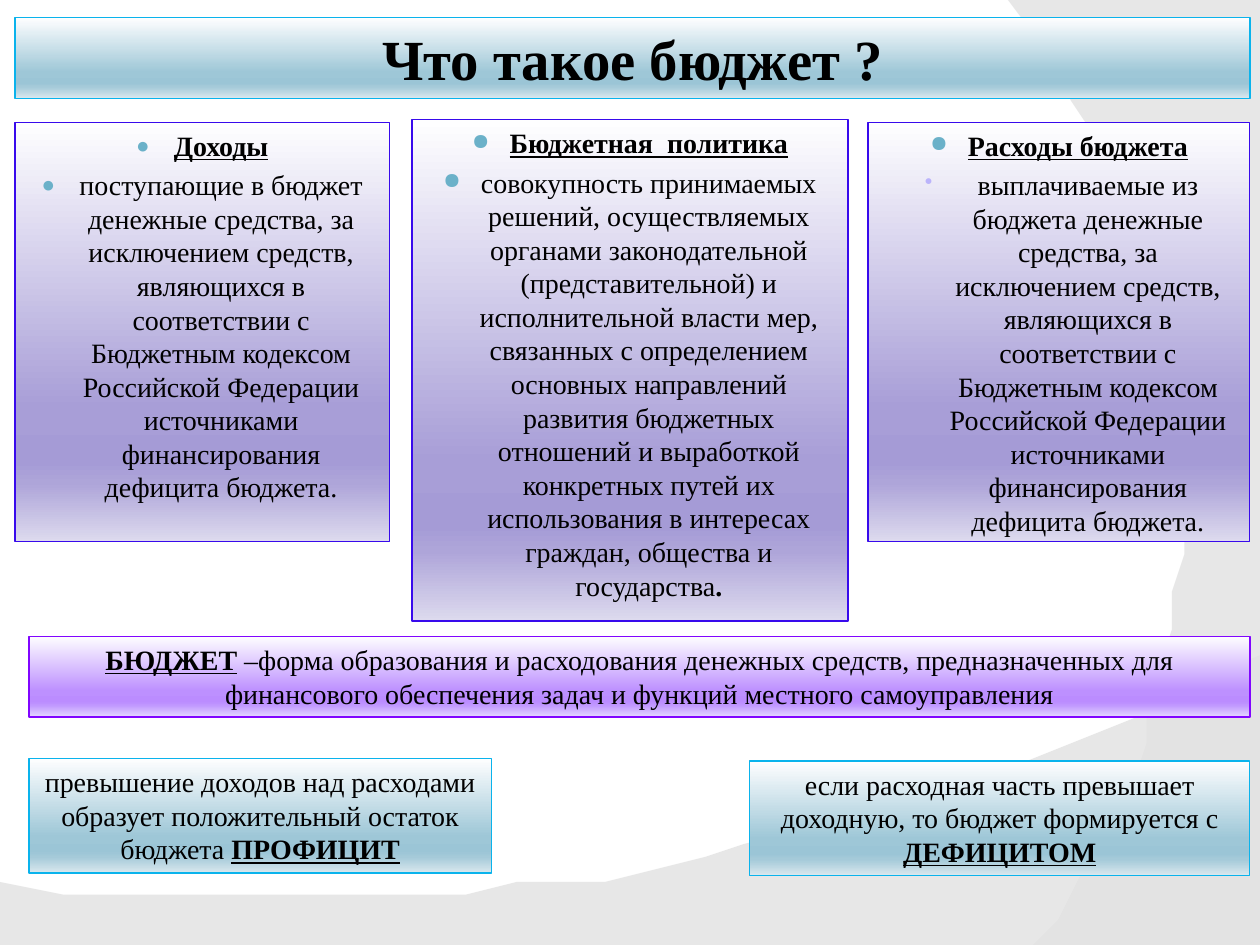
import pptx
import pptx.dml.color
import pptx.enum.shapes
import pptx.enum.text
import pptx.oxml
import pptx.oxml.ns
import pptx.util

RGB = pptx.dml.color.RGBColor
BLACK = RGB(0x00, 0x00, 0x00)
WAVE_GREY = RGB(0xE2, 0xE2, 0xE2)
BULLET_BLUE = RGB(0x6B, 0xB1, 0xC9)
BULLET_LILAC = RGB(0xBB, 0xB4, 0xFB)
PALE = RGB(0xFE, 0xFE, 0xFF)

# Each style: line colour, then the gradient colours after the pale start.
LILAC = (RGB(0x38, 0x0A, 0xEC), RGB(0xA8, 0x9E, 0xD7), RGB(0xA5, 0x9B, 0xD6),
         RGB(0xAE, 0xA5, 0xD9), RGB(0xDD, 0xDA, 0xEE))
VIOLET = (RGB(0x81, 0x05, 0xFF), RGB(0xBD, 0x90, 0xFF), RGB(0xBB, 0x8C, 0xFF),
          RGB(0xC1, 0x99, 0xFF), RGB(0xE4, 0xD6, 0xFF))
BLUE = (RGB(0x0A, 0xB3, 0xEC), RGB(0x9E, 0xC7, 0xD7), RGB(0x9B, 0xC5, 0xD6),
        RGB(0xA5, 0xCA, 0xD9), RGB(0xDA, 0xE8, 0xEE))
STOPS = (0, 68, 81, 86, 100)

COLUMNS, ROWS = 100, 75
CELL = pptx.util.Inches(0.1)
FONT = "Times New Roman"
BODY_SIZE = 16
PLAIN = {}
BOLD = {"bold": True}
TERM = {"bold": True, "underline": True}

FINANCING = ("в бюджет", "из бюджета")
SOURCES = ("денежные средства, за исключением средств, являющихся в соответствии "
           "с Бюджетным кодексом Российской Федерации источниками "
           "финансирования дефицита бюджета.")
POLICY = ("совокупность принимаемых решений, осуществляемых органами "
          "законодательной (представительной) и исполнительной власти мер, "
          "связанных с определением основных направлений развития бюджетных "
          "отношений и выработкой конкретных путей их использования в интересах "
          "граждан, общества и государства")


def xml(text):
    return pptx.oxml.parse_xml(text.replace(
        ">", f" {pptx.oxml.ns.nsdecls('a')}>", 1))


def place(sp, cells):
    """Set left, top, width and height in grid cells."""
    for name, value in zip(("left", "top", "width", "height"), cells):
        setattr(sp, name, int(value * CELL))


def paint(sp, style):
    """Give a box its vertical gradient and thin line."""
    line, *shades = style
    sp.fill.gradient()
    stops = "".join(
        f'<a:gs pos="{pos * 1000}"><a:srgbClr val="{shade}"/></a:gs>'
        for pos, shade in zip(STOPS, (PALE, *shades)))
    old = sp._element.spPr.find(pptx.oxml.ns.qn("a:gradFill"))
    old.getparent().replace(old, xml(
        f'<a:gradFill><a:gsLst>{stops}</a:gsLst>'
        '<a:lin ang="5400000" scaled="0"/></a:gradFill>'))
    sp.line.color.rgb = line
    sp.line.width = pptx.util.Pt(0.75)


def add_bullet(p, char, color, margin, indent):
    pPr = p._p.get_or_add_pPr()
    for name, inches in (("marL", margin), ("indent", indent)):
        pPr.set(name, str(pptx.util.Inches(inches)))
    for part in (f'<a:buClr><a:srgbClr val="{color}"/></a:buClr>',
                 '<a:buSzPct val="80000"></a:buSzPct>',
                 f'<a:buChar char="{char}"></a:buChar>'):
        pPr.append(xml(part))


def write(sp, paragraphs, size=BODY_SIZE, bullets=None, anchor="TOP"):
    """Fill a box; a paragraph is a list of (text, format) runs."""
    tf = sp.text_frame
    tf.word_wrap = True
    tf.auto_size = pptx.enum.text.MSO_AUTO_SIZE.NONE
    tf.vertical_anchor = pptx.enum.text.MSO_ANCHOR[anchor]
    for i, runs in enumerate(paragraphs):
        p = tf.add_paragraph() if i else tf.paragraphs[0]
        p.alignment = pptx.enum.text.PP_ALIGN.CENTER
        p.space_before = pptx.util.Pt(0.2 * size if i else 0)
        if bullets:
            add_bullet(p, *bullets[i])
        for text, extra in runs:
            r = p.add_run()
            r.text = text
            r.font.color.rgb = BLACK
            look = {"name": FONT, "size": pptx.util.Pt(size),
                    "bold": False, "underline": False, **extra}
            for name, value in look.items():
                setattr(r.font, name, value)


def add_box(s, cells, style, paragraphs, **options):
    sp = s.shapes.add_shape(pptx.enum.shapes.MSO_SHAPE.RECTANGLE, 0, 0, 0, 0)
    sp.shadow.inherit = False
    place(sp, cells)
    paint(sp, style)
    write(sp, paragraphs, **options)


def curve(points, steps=24):
    """Points along a cubic Bezier curve."""
    return [tuple(sum(k * (1 - t) ** (3 - n) * t ** n * pt[axis]
                      for n, (k, pt) in enumerate(zip((1, 3, 3, 1), points)))
                  for axis in (0, 1))
            for t in (i / steps for i in range(steps + 1))]


def add_wave(s, points):
    """Draw a translucent background outline behind everything else."""
    builder = s.shapes.build_freeform(*points[0], scale=CELL)
    builder.add_line_segments(points[1:], close=True)
    sp = builder.convert_to_shape()
    sp.shadow.inherit = False
    sp.line.fill.background()
    sp.fill.solid()
    sp.fill.fore_color.rgb = WAVE_GREY
    color = sp._element.spPr.find(".//" + pptx.oxml.ns.qn("a:srgbClr"))
    color.append(xml('<a:alpha val="80000"></a:alpha>'))
    s.shapes._spTree.remove(sp._element)
    s.shapes._spTree.insert(2, sp._element)


def main():
    prs = pptx.Presentation()
    prs.slide_width, prs.slide_height = COLUMNS * CELL, ROWS * CELL
    s = prs.slides.add_slide(prs.slide_layouts[1])
    title, income = s.placeholders

    add_wave(s, [(80, 0), (100, 0), (100, ROWS)]
             + curve([(82.1, ROWS), (93.5, 61.9), (101.8, 30), (80, 0)])[:-1])
    add_wave(s, [(0, ROWS), (COLUMNS, ROWS)]
             + curve([(100, 52), (55.9, 72.9), (39.1, 71.9), (0, 70.5)]))

    place(title, (1.2, 1.4, 98, 6.4))
    paint(title, BLUE)
    write(title, [[("Что такое бюджет ?", BOLD)]], size=32.4, anchor="MIDDLE")

    dot = ("●", BULLET_BLUE, 0.3, -0.3)
    small_dot = ("•", BULLET_LILAC, 0.46, -0.42)
    into_budget, from_budget = FINANCING
    place(income, (1.2, 9.7, 29.7, 33.3))
    paint(income, LILAC)
    write(income, [[("Доходы", TERM)],
                   [(f"поступающие {into_budget} {SOURCES}", PLAIN)]],
          bullets=(dot, dot))
    add_box(s, (32.7, 9.5, 34.6, 39.8), LILAC,
            [[("Бюджетная  политика", TERM)], [(POLICY, PLAIN), (".", BOLD)]],
            bullets=(dot, dot))
    add_box(s, (68.9, 9.7, 30.3, 33.3), LILAC,
            [[("Расходы бюджета", TERM)],
             [(f"выплачиваемые {from_budget} {SOURCES}", PLAIN)]],
            bullets=(dot, small_dot))

    add_box(s, (2.3, 50.5, 96.9, 6.4), VIOLET,
            [[("БЮДЖЕТ", TERM),
              (" –форма образования и расходования денежных средств, "
               "предназначенных для финансового обеспечения задач и функций "
               "местного самоуправления", PLAIN)]])
    add_box(s, (2.3, 60.2, 36.7, 9.1), BLUE,
            [[("превышение доходов над расходами образует положительный "
               "остаток бюджета ", PLAIN), ("ПРОФИЦИТ", TERM)]])
    add_box(s, (59.5, 60.4, 39.7, 9.1), BLUE,
            [[("если расходная часть превышает доходную, то бюджет "
               "формируется с ", PLAIN), ("ДЕФИЦИТОМ", TERM)]])
    prs.save("out.pptx")


if __name__ == "__main__":
    main()
